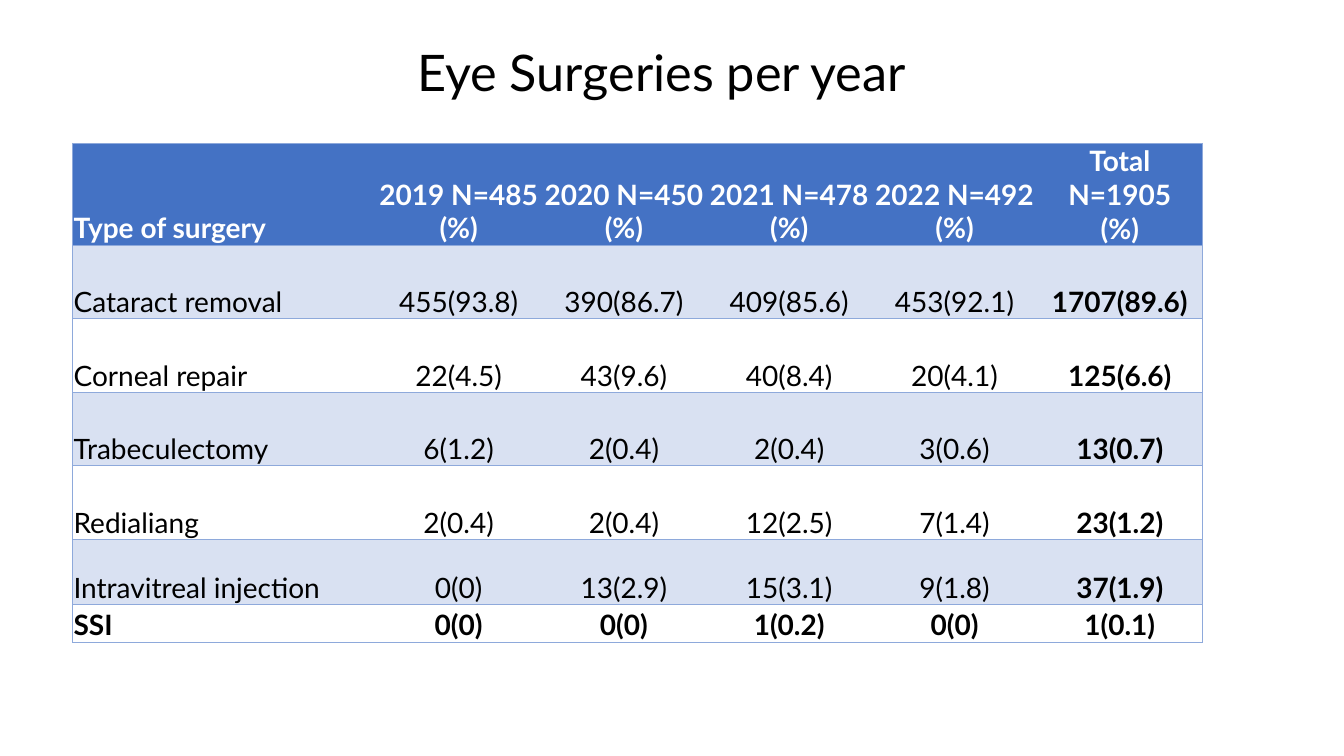
from lxml.etree import SubElement
from pptx import Presentation
from pptx.dml.color import RGBColor
from pptx.enum.text import MSO_ANCHOR, PP_ALIGN
from pptx.oxml.ns import qn
from pptx.util import Inches, Pt

COLORS = {
    "text": "000000",
    "header_text": "FFFFFF",
    "header": "4472C4",
    "band": "D9E1F2",
    "rule": "8EA9DB",
}
FONT = "Lato"
CELL_FORMAT = {
    "vertical_anchor": MSO_ANCHOR.BOTTOM,
    "margin_left": Inches(0.01),
    "margin_right": Inches(0.01),
    "margin_top": Inches(0.01),
    "margin_bottom": 0,
}
TITLE_FORMAT = {"word_wrap": True, "vertical_anchor": MSO_ANCHOR.MIDDLE}
PLAIN_TABLE = {"first_row": False, "horz_banding": False}

SURGERIES = [
    ["Type of surgery", "2019 N=485\n(%)", "2020 N=450\n(%)",
     "2021 N=478\n(%)", "2022 N=492\n(%)", "Total N=1905\n(%)"],
    ["Cataract removal", "455(93.8)", "390(86.7)", "409(85.6)", "453(92.1)", "1707(89.6)"],
    ["Corneal repair", "22(4.5)", "43(9.6)", "40(8.4)", "20(4.1)", "125(6.6)"],
    ["Trabeculectomy", "6(1.2)", "2(0.4)", "2(0.4)", "3(0.6)", "13(0.7)"],
    ["Redialiang", "2(0.4)", "2(0.4)", "12(2.5)", "7(1.4)", "23(1.2)"],
    ["Intravitreal injection", "0(0)", "13(2.9)", "15(3.1)", "9(1.8)", "37(1.9)"],
    ["SSI", "0(0)", "0(0)", "1(0.2)", "0(0)", "1(0.1)"],
]
COLUMN_SHARES = [22.58] + [12.3] * 5
ROW_SHARES = [9.73] * 5 + [8.67, 4.93]


def apply_format(target, formats):
    for attribute, value in formats.items():
        setattr(target, attribute, value)


class SlideBuilder:
    def __init__(self, presentation):
        self.width = presentation.slide_width
        self.height = presentation.slide_height
        self.slide = presentation.slides.add_slide(presentation.slide_layouts[6])

    def across(self, share):
        return round(self.width * share / 100)

    def down(self, share):
        return round(self.height * share / 100)

    def place(self, left, top, width, height):
        return self.across(left), self.down(top), self.across(width), self.down(height)

    def fill_text(self, frame, text, size, color, bold=False, align=PP_ALIGN.LEFT, spacing=1.0):
        frame.text = text
        for paragraph in frame.paragraphs:
            apply_format(paragraph, {"alignment": align, "line_spacing": spacing})
            font = paragraph.runs[0].font
            apply_format(font, {"name": FONT, "size": Pt(size), "bold": bold})
            font.color.rgb = RGBColor.from_string(COLORS[color])

    def title(self, text, box):
        frame = self.slide.shapes.add_textbox(*self.place(*box)).text_frame
        apply_format(frame, TITLE_FORMAT)
        self.fill_text(frame, text, 36, "text", align=PP_ALIGN.CENTER, spacing=0.9)

    def borders(self, cell, visible_sides):
        properties = cell._tc.get_or_add_tcPr()
        for side in "LRTB":
            line = SubElement(properties, qn(f"a:ln{side}"), w=str(Pt(0.5)))
            if side in visible_sides:
                fill = SubElement(line, qn("a:solidFill"))
                SubElement(fill, qn("a:srgbClr"), val=COLORS["rule"])
            else:
                SubElement(line, qn("a:noFill"))

    def paint(self, cell, color):
        if color:
            cell.fill.solid()
            cell.fill.fore_color.rgb = RGBColor.from_string(COLORS[color])
        else:
            cell.fill.background()

    def table(self, records, box, column_shares, row_shares):
        place = self.place(*box)
        frame = self.slide.shapes.add_table(len(records), len(records[0]), *place)
        grid = frame.table
        apply_format(grid, PLAIN_TABLE)
        for column, share in zip(grid.columns, column_shares):
            column.width = self.across(share)
        for row, share in zip(grid.rows, row_shares):
            row.height = self.down(share)
        frame.height = place[3]

        last_row, last_column = len(records) - 1, len(records[0]) - 1
        for r, record in enumerate(records):
            background = "header" if r == 0 else "band" if r % 2 else None
            for c, text in enumerate(record):
                cell = grid.cell(r, c)
                apply_format(cell, CELL_FORMAT)
                self.borders(cell, "TB" + {0: "L", last_column: "R"}.get(c, ""))
                self.paint(cell, background)
                self.fill_text(
                    cell.text_frame, text, 20,
                    "text" if r else "header_text",
                    bold=r in (0, last_row) or c == last_column,
                    align=PP_ALIGN.CENTER if c else PP_ALIGN.LEFT,
                )


def main():
    presentation = Presentation()
    apply_format(presentation, {"slide_width": Inches(13.33), "slide_height": Inches(7.5)})
    builder = SlideBuilder(presentation)
    builder.title("Eye Surgeries per year", (6.1, 3.07, 86.25, 13.73))
    builder.table(SURGERIES, (5.4, 18.93, 84.08, 65.87), COLUMN_SHARES, ROW_SHARES)
    presentation.save("out.pptx")


if __name__ == "__main__":
    main()
